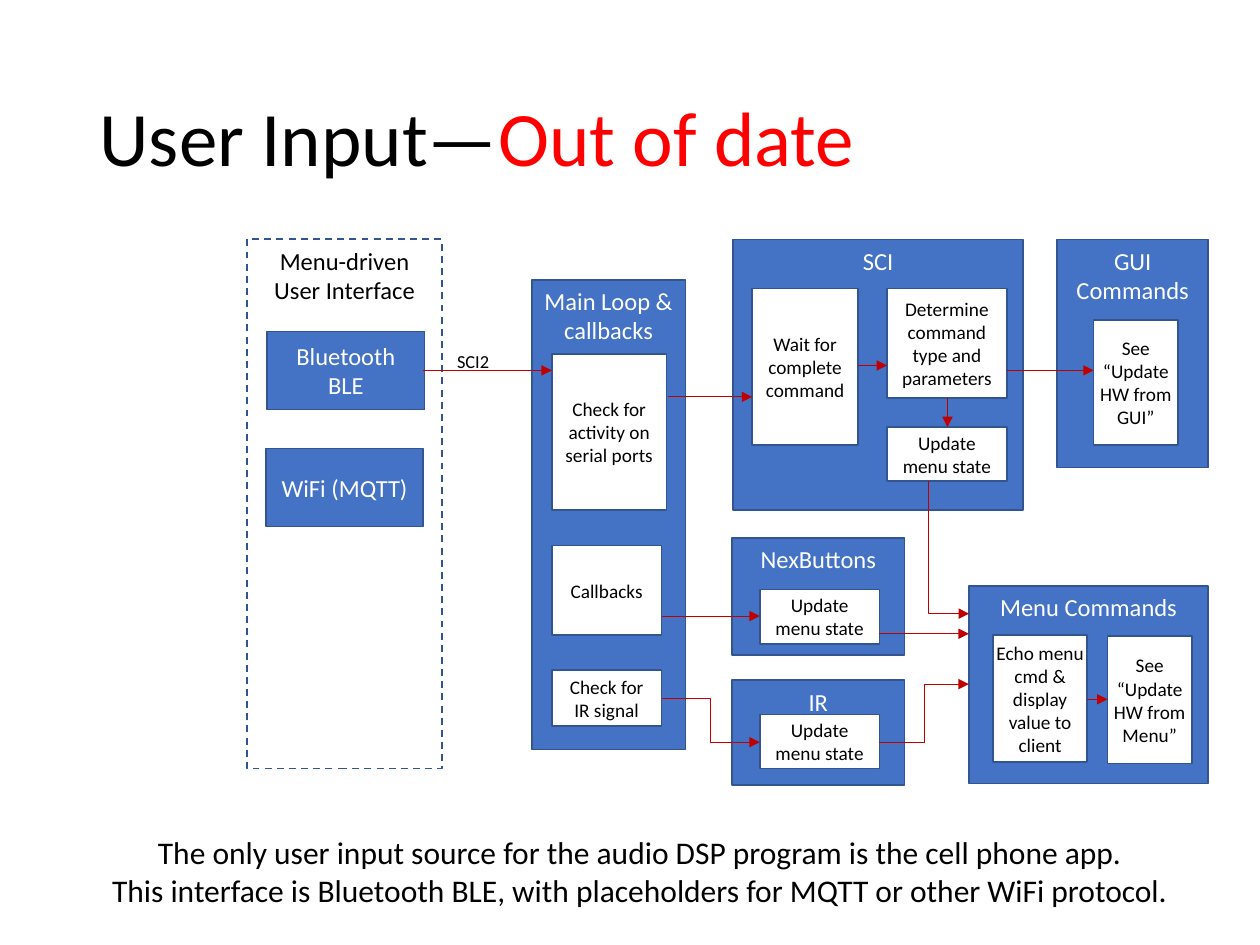
from lxml import etree
from pptx import Presentation
from pptx.dml.color import RGBColor
from pptx.enum import dml, shapes, text
from pptx.oxml.ns import qn
from pptx.util import Inches, Pt

BLUE = RGBColor(0x44, 0x72, 0xC4)
EDGE = RGBColor(0x32, 0x54, 0x91)
RED = RGBColor(0xFF, 0, 0)
DARK = RGBColor(0xC0, 0, 0)
WHITE = RGBColor(0xFF, 0xFF, 0xFF)
BLACK = RGBColor(0, 0, 0)
FONT = "Calibri"
WIDE, THIN, NONE = 0.1, 0.02, 0
TOP, MID = text.MSO_ANCHOR.TOP, text.MSO_ANCHOR.MIDDLE

TITLE = [("User Input—", BLACK), ("Out of date", RED)]
NOTES = ["The only user input source for the audio DSP program is the cell phone app.",
         "This interface is Bluetooth BLE, with placeholders for MQTT or other WiFi protocol."]
STATE = "Update menu state"

PANELS = [
    ("GUI Commands", 8.39, 1.9, 1.2, 1.81, NONE),
    ("Main Loop & callbacks", 4.22, 2.22, 1.22, 3.73, WIDE),
    ("SCI", 5.82, 1.9, 2.3, 2.15, WIDE),
    ("NexButtons", 5.81, 4.27, 1.37, 0.93, WIDE),
    ("IR", 5.81, 5.4, 1.37, 0.83, WIDE),
    ("Menu Commands", 7.69, 4.65, 1.9, 1.57, NONE),
]
LINKS = [
    ("Bluetooth BLE", 2.12, 2.63, 1.25, 0.62, WIDE),
    ("WiFi (MQTT)", 2.11, 3.56, 1.25, 0.62, WIDE),
]
STEPS = [
    ("Check for activity on serial ports", 4.38, 2.81, 0.91, 1.24, WIDE),
    ("Callbacks", 4.38, 4.33, 0.87, 0.71, WIDE),
    ("Check for IR signal", 4.38, 5.32, 0.87, 0.44, WIDE),
    ("Wait for complete command", 5.97, 2.29, 0.84, 1.24, WIDE),
    ("Determine command type and parameters", 7.04, 2.29, 0.95, 0.87, WIDE),
    (STATE, 7.04, 3.39, 0.95, 0.43, WIDE),
    (STATE, 6.03, 4.68, 0.95, 0.43, WIDE),
    (STATE, 6.03, 5.67, 0.95, 0.43, WIDE),
    ("Echo menu cmd & display value to client", 7.88, 5.04, 0.75, 1.01, THIN),
    ("See “Update HW from Menu”", 8.79, 5.05, 0.67, 1.01, THIN),
    ("See “Update HW from GUI”", 8.68, 2.54, 0.67, 0.99, THIN),
]
FRAME = [("Menu-driven User Interface", 1.96, 1.9, 1.55, 4.2, WIDE)]
GROUPS = [
    (PANELS, BLUE, WHITE, 14, TOP),
    (LINKS, BLUE, WHITE, 14, MID),
    (STEPS, WHITE, BLACK, 11, MID),
    (FRAME, None, BLACK, 14, TOP),
]
ARROWS = [
    (3.36, 2.94, 4.38, 2.94),
    (5.3, 3.15, 5.97, 3.15),
    (6.81, 2.9, 7.04, 2.9),
    (7.52, 3.16, 7.52, 3.39),
    (7.99, 2.94, 8.68, 2.94),
    (5.25, 4.89, 6.03, 4.89),
    (6.98, 5.03, 7.69, 5.03),
    (8.63, 5.55, 8.79, 5.55),
]
ELBOWS = [
    (5.25, 5.54, 6.03, 5.89),
    (6.98, 5.89, 7.69, 5.43),
]
DROP = (7.37, 3.82, 7.69, 4.87)


def style(run, size, color):
    run.font.name = FONT
    run.font.size = Pt(size)
    run.font.color.rgb = color


def write(frame, lines, size, color, align):
    frame.text = "\n".join(lines)
    for para in frame.paragraphs:
        para.alignment = align
        for run in para.runs:
            style(run, size, color)


def box(slide, label, x, y, w, h, inset, fill, ink, size, anchor):
    rect = slide.shapes.add_shape(shapes.MSO_SHAPE.RECTANGLE, *map(Inches, (x, y, w, h)))
    rect.shadow.inherit = False
    rect.line.color.rgb = EDGE
    rect.line.width = Pt(1)
    if fill is None:
        rect.fill.background()
        rect.line.dash_style = dml.MSO_LINE.DASH
    else:
        rect.fill.solid()
        rect.fill.fore_color.rgb = fill
    frame = rect.text_frame
    frame.word_wrap = True
    frame.vertical_anchor = anchor
    frame.margin_left = frame.margin_right = Inches(inset)
    write(frame, [label], size, ink, text.PP_ALIGN.CENTER)


def arrow(slide, kind, ends):
    line = slide.shapes.add_connector(kind, *map(Inches, ends))
    line.line.color.rgb = DARK
    line.line.width = Pt(0.5)
    props = line._element.spPr
    etree.SubElement(props.find(qn("a:ln")), qn("a:tailEnd"), type="triangle")
    etree.SubElement(props, qn("a:effectLst"))
    return props


def drop(slide, x1, y1, x2, y2):
    midx, midy = (x1 + x2) / 2, (y1 + y2) / 2
    dx, dy = (y2 - y1) / 2, (x2 - x1) / 2
    ends = (midx + dx, midy - dy, midx - dx, midy + dy)
    props = arrow(slide, shapes.MSO_CONNECTOR.ELBOW, ends)
    props.find(qn("a:xfrm")).set("rot", str(270 * 60000))
    guides = props.find(qn("a:prstGeom")).find(qn("a:avLst"))
    etree.SubElement(guides, qn("a:gd"), name="adj1", fmla="val 100000")


def note(slide, lines, x, y, w, h, size, align):
    area = slide.shapes.add_textbox(*map(Inches, (x, y, w, h)))
    area.text_frame.word_wrap = False
    write(area.text_frame, lines, size, BLACK, align)


def head(slide):
    title = slide.shapes.title
    title.left, title.top, title.width, title.height = map(Inches, (0.69, 0.4, 8.62, 1.45))
    frame = title.text_frame
    frame.vertical_anchor = MID
    para = frame.paragraphs[0]
    para.alignment = text.PP_ALIGN.LEFT
    para.line_spacing = 0.9
    for words, color in TITLE:
        run = para.add_run()
        run.text = words
        style(run, 44, color)


def main():
    deck = Presentation()
    deck.slide_width, deck.slide_height = Inches(10), Inches(7.5)
    slide = deck.slides.add_slide(deck.slide_layouts[5])
    head(slide)
    for items, fill, ink, size, anchor in GROUPS:
        for item in items:
            box(slide, *item, fill, ink, size, anchor)
    for ends in ARROWS:
        arrow(slide, shapes.MSO_CONNECTOR.STRAIGHT, ends)
    for ends in ELBOWS:
        arrow(slide, shapes.MSO_CONNECTOR.ELBOW, ends)
    drop(slide, *DROP)
    note(slide, ["SCI2"], 3.53, 2.73, 0.47, 0.29, 10.5, text.PP_ALIGN.LEFT)
    note(slide, NOTES, 0.71, 6.56, 8.74, 0.71, 18, text.PP_ALIGN.CENTER)
    deck.save("out.pptx")


if __name__ == "__main__":
    main()
